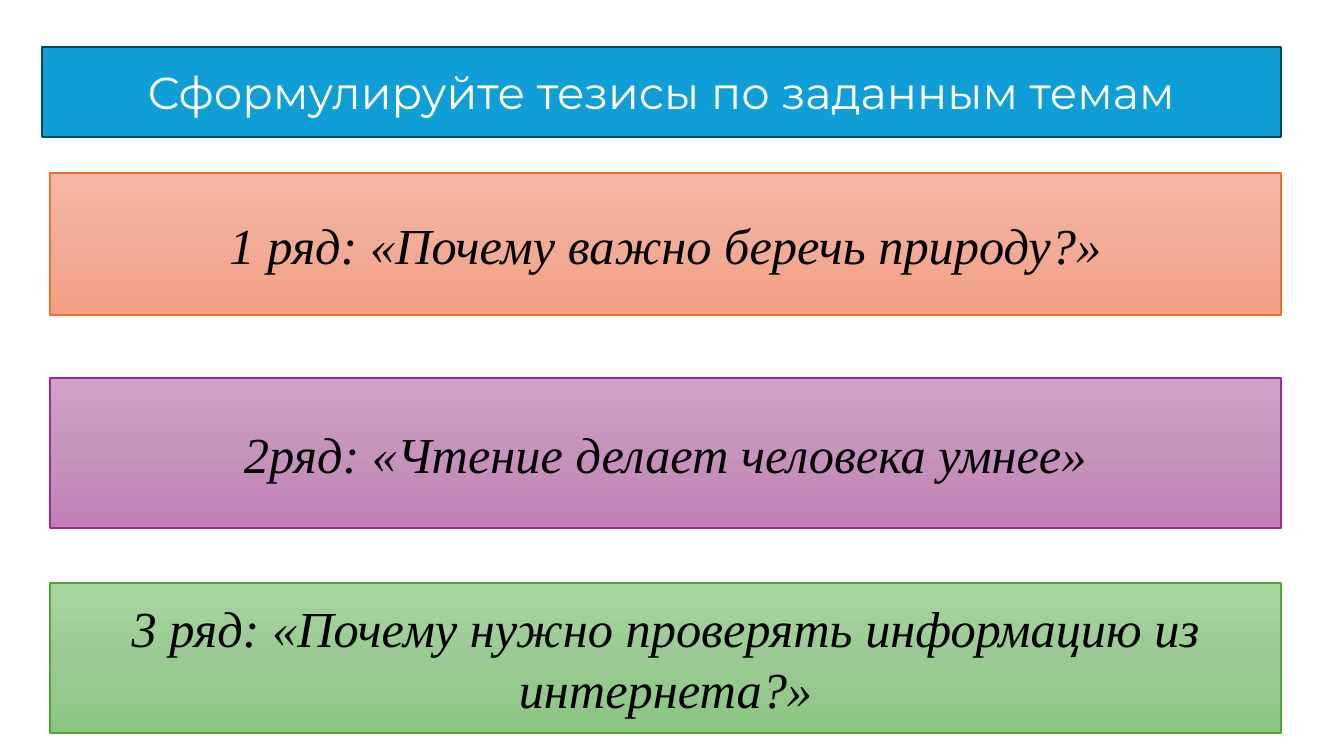
from copy import deepcopy

from pptx import Presentation
from pptx import util as u
from pptx.dml.color import RGBColor
from pptx.enum import shapes, text

TITLE = "Сформулируйте тезисы по заданным темам"
TITLE_BOX = (42, 47, 1239, 90)
WHITE = RGBColor(0xFF, 0xFF, 0xFF)
BLACK = RGBColor(0x00, 0x00, 0x00)
BLUE = RGBColor(0x0F, 0x9E, 0xD5)
NAVY = RGBColor(0x07, 0x45, 0x5D)
ORANGE = RGBColor(0xE9, 0x71, 0x32)
PURPLE = RGBColor(0xA0, 0x2B, 0x93)
GREEN = RGBColor(0x4E, 0xA7, 0x2E)
PEACH_SHADES = (RGBColor(0xF5, 0xB8, 0xA5), RGBColor(0xF2, 0xAB, 0x96), RGBColor(0xF5, 0x9E, 0x82))
LILAC_SHADES = (RGBColor(0xD0, 0xA0, 0xC8), RGBColor(0xC6, 0x93, 0xBD), RGBColor(0xC1, 0x7F, 0xB6))
LEAF_SHADES = (RGBColor(0xA8, 0xD5, 0xA0), RGBColor(0x9C, 0xCA, 0x94), RGBColor(0x8A, 0xC6, 0x80))

TOPICS = [
    ("1 ряд: «Почему важно беречь природу?»", 142, ORANGE, PEACH_SHADES),
    ("2ряд: «Чтение делает человека умнее»", 150, PURPLE, LILAC_SHADES),
    ("3 ряд: «Почему нужно проверять информацию из интернета?»", 150, GREEN, LEAF_SHADES),
]
TOPIC_LEFT, TOPIC_TOP, TOPIC_WIDTH, TOPIC_PITCH = 50, 173, 1231, 205
SLIDE_WIDTH, SLIDE_HEIGHT = 1344, 756
SCALE = u.Inches(7.5) / SLIDE_HEIGHT


def px(length):
    return u.Emu(round(length * SCALE))


def write(shape, words, font_name, size, color, italic=None):
    frame = shape.text_frame
    frame.text = words
    frame.word_wrap = True
    frame.auto_size = text.MSO_AUTO_SIZE.NONE
    frame.vertical_anchor = text.MSO_ANCHOR.MIDDLE
    paragraph = frame.paragraphs[0]
    paragraph.alignment = text.PP_ALIGN.CENTER
    paragraph.font.name = font_name
    paragraph.font.size = u.Pt(size)
    paragraph.font.italic = italic
    paragraph.font.color.rgb = color


def outline(shape, color, width):
    shape.line.color.rgb = color
    shape.line.width = u.Pt(width)


def shade(shape, shades):
    shape.fill.gradient()
    shape.fill.gradient_angle = 270
    first = shape.element.xpath("./p:spPr/a:gradFill/a:gsLst/a:gs")[0]
    first.addnext(deepcopy(first))
    for stop, position, color in zip(shape.fill.gradient_stops, (0, 0.5, 1), shades):
        stop.position = position
        stop.color.rgb = color


presentation = Presentation()
presentation.slide_width = px(SLIDE_WIDTH)
presentation.slide_height = px(SLIDE_HEIGHT)
slide = presentation.slides.add_slide(presentation.slide_layouts[5])

title = slide.shapes.title
title.left, title.top, title.width, title.height = map(px, TITLE_BOX)
title.fill.solid()
title.fill.fore_color.rgb = BLUE
outline(title, NAVY, 1.5)
write(title, TITLE, "Montserrat", 32, WHITE)

for row, (words, height, line_color, shades) in enumerate(TOPICS):
    box = (TOPIC_LEFT, TOPIC_TOP + row * TOPIC_PITCH, TOPIC_WIDTH, height)
    topic = slide.shapes.add_shape(shapes.MSO_SHAPE.RECTANGLE, *map(px, box))
    topic.shadow.inherit = False
    shade(topic, shades)
    outline(topic, line_color, 1)
    write(topic, words, "Times New Roman", 36, BLACK, italic=True)

presentation.save("out.pptx")
